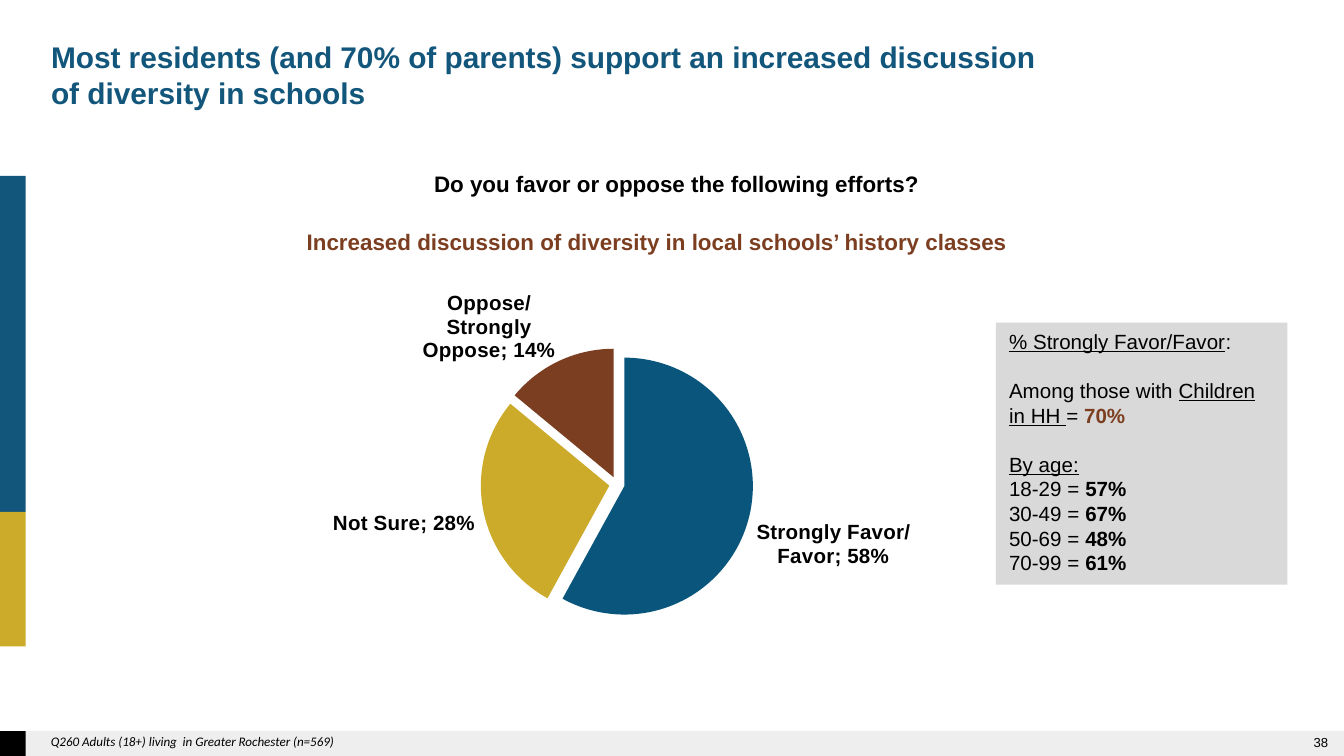
"""Build the survey slide on discussing diversity in schools."""
import copy

import pptx
import pptx.chart.data
import pptx.dml.color
import pptx.enum.chart
import pptx.enum.shapes
import pptx.enum.text
import pptx.oxml
import pptx.oxml.ns
import pptx.util

Inches, Pt = pptx.util.Inches, pptx.util.Pt
RGBColor = pptx.dml.color.RGBColor
ALIGN = pptx.enum.text.PP_ALIGN
ANCHOR = pptx.enum.text.MSO_ANCHOR

BLUE = RGBColor(0x12, 0x56, 0x7C)
PIE_BLUE = RGBColor(0x09, 0x55, 0x7C)
GOLD = RGBColor(0xCC, 0xAB, 0x2B)
BROWN = RGBColor(0x7C, 0x3E, 0x20)
BLACK = RGBColor(0, 0, 0)
PANEL_GRAY = RGBColor(0xD9, 0xD9, 0xD9)
FOOTER_GRAY = RGBColor(0xEE, 0xEE, 0xEE)

TITLE = ("Most residents (and 70% of parents) support an increased discussion \v"
         "of diversity in schools")
QUESTION = "Do you favor or oppose the following efforts?"
EFFORT = "Increased discussion of diversity in local schools’ history classes"
FOOTNOTE = "Q260 Adults (18+) living  in Greater Rochester (n=569)"
PAGE_NUMBER = "38"

ANSWERS = [
    ("Strongly Favor/ Favor", 0.58, PIE_BLUE),
    ("Not Sure", 0.28, GOLD),
    ("Oppose/ Strongly Oppose", 0.14, BROWN),
]
AGES = [("18-29", "57%"), ("30-49", "67%"), ("50-69", "48%"), ("70-99", "61%")]

UNDERLINED = {"underline": True}
BOLD = {"bold": True}
PANEL = [
    (0, [("% Strongly Favor/Favor", UNDERLINED), (":", {})]),
    (13, [("Among those with ", {}), ("Children in HH ", UNDERLINED),
          ("= ", {}), ("70%", {"bold": True, "color": BROWN})]),
    (13, [("By age:", UNDERLINED)]),
] + [(0, [(f"{age} = ", {}), (share, BOLD)]) for age, share in AGES]

BARS = [
    ((0, 5.44, 10, 0.19), FOOTER_GRAY),
    ((0, 1.31, 0.19, 2.5), BLUE),
    ((0, 3.81, 0.19, 1), GOLD),
    ((0, 5.44, 0.19, 0.19), BLACK),
]
PLOT_AREA = {"x": 0.332, "y": 0.204, "w": 0.368, "h": 0.656}
OPPOSE_INDEX = 2
OPPOSE_LABEL_DROP = 0.02


def add_span(para, text, size=11, name="Arial", color=BLACK,
             bold=False, italic=False, underline=False):
    span = para.add_run()
    span.text = text
    font = span.font
    font.size, font.name, font.bold = Pt(size), name, bold
    font.italic, font.underline = italic, underline
    font.color.rgb = color


def add_text(page, place, text, align=ALIGN.LEFT, anchor=ANCHOR.TOP, **style):
    frame = page.shapes.add_textbox(*map(Inches, place)).text_frame
    frame.word_wrap = True
    frame.vertical_anchor = anchor
    para = frame.paragraphs[0]
    para.alignment = align
    add_span(para, text, **style)


def add_block(page, place, color):
    block = page.shapes.add_shape(
        pptx.enum.shapes.MSO_SHAPE.RECTANGLE, *map(Inches, place))
    block.shadow.inherit = False
    block.fill.solid()
    block.fill.fore_color.rgb = color
    block.line.fill.background()
    return block


def set_title(page):
    box = page.shapes.title
    box.left, box.top, box.width, box.height = map(Inches, (0.28, 0.24, 8.52, 0.5))
    frame = box.text_frame
    frame.auto_size = pptx.enum.text.MSO_AUTO_SIZE.NONE
    frame.vertical_anchor = ANCHOR.TOP
    frame.text = TITLE
    para = frame.paragraphs[0]
    para.alignment = ALIGN.LEFT
    for span in para.runs:
        span.font.size, span.font.name, span.font.bold = Pt(16), "Arial", True
        span.font.color.rgb = BLUE


def chart_element(content):
    namespace = pptx.oxml.ns.nsdecls("c")
    return pptx.oxml.parse_xml(content.replace(" NS", " " + namespace, 1))


def lower_label(labels, index, drop):
    label = chart_element(
        f'<c:dLbl NS><c:idx val="{index}"/><c:layout><c:manualLayout>'
        f'<c:x val="0"/><c:y val="{drop}"/></c:manualLayout></c:layout></c:dLbl>')
    for part in labels:
        if part.tag != pptx.oxml.ns.qn("c:showLeaderLines"):
            label.append(copy.deepcopy(part))
    labels.insert(0, label)


def add_pie(page):
    data = pptx.chart.data.CategoryChartData(number_format="0%")
    data.categories = [answer for answer, _, _ in ANSWERS]
    data.add_series("Series 1", [share for _, share, _ in ANSWERS])
    chart = page.shapes.add_chart(
        pptx.enum.chart.XL_CHART_TYPE.PIE,
        *map(Inches, (1.33, 1.96, 6.32, 3.09)), data).chart
    chart.has_title = chart.has_legend = False
    chart.font.size, chart.font.name, chart.font.bold = Pt(8), "Arial", True
    chart.font.color.rgb = BLACK

    plot = chart.plots[0]
    series = plot.series[0]
    categories = series._element.find(pptx.oxml.ns.qn("c:cat"))
    categories.addprevious(chart_element('<c:explosion NS val="6"/>'))
    for index, (_, _, color) in enumerate(ANSWERS):
        fill = series.points[index].format.fill
        fill.solid()
        fill.fore_color.rgb = color

    labels = series.data_labels
    labels.show_value = labels.show_category_name = True
    labels.number_format, labels.number_format_is_linked = "0%", False
    labels.position = pptx.enum.chart.XL_LABEL_POSITION.OUTSIDE_END
    labels.font.size, labels.font.name, labels.font.bold = Pt(11), "Arial", True
    labels.font.color.rgb = BLACK
    bubble_flag = labels._element.find(pptx.oxml.ns.qn("c:showBubbleSize"))
    bubble_flag.addnext(chart_element("<c:separator NS>; </c:separator>"))
    lower_label(labels._element, OPPOSE_INDEX, OPPOSE_LABEL_DROP)

    area = plot._element.getparent()
    for old in area.findall(pptx.oxml.ns.qn("c:layout")):
        area.remove(old)
    modes = "".join(f'<c:{side}Mode val="edge"/>' for side in "xy")
    sizes = "".join(f'<c:{side} val="{value}"/>' for side, value in PLOT_AREA.items())
    area.insert(0, chart_element(
        '<c:layout NS><c:manualLayout><c:layoutTarget val="inner"/>'
        f"{modes}{sizes}</c:manualLayout></c:layout>"))


def add_panel(page):
    frame = add_block(page, (7.41, 2.4, 2.17, 1.95), PANEL_GRAY).text_frame
    frame.word_wrap = True
    frame.vertical_anchor = ANCHOR.TOP
    for index, (gap, spans) in enumerate(PANEL):
        para = frame.add_paragraph() if index else frame.paragraphs[0]
        para.alignment = ALIGN.LEFT
        para.space_before = Pt(gap)
        for text, style in spans:
            add_span(para, text, **style)


def main():
    deck = pptx.Presentation()
    deck.slide_width = Inches(10)
    deck.slide_height = deck.slide_width * 9 // 16
    page = deck.slides.add_slide(deck.slide_layouts[5])
    for place, color in BARS:
        add_block(page, place, color)
    add_text(page, (7.65, 5.44, 2.33, 0.17), PAGE_NUMBER,
             align=ALIGN.RIGHT, anchor=ANCHOR.MIDDLE, size=7)
    set_title(page)
    add_text(page, (2.66, 1.22, 4.75, 0.3), QUESTION,
             align=ALIGN.CENTER, size=12, bold=True)
    add_pie(page)
    add_text(page, (0.28, 5.41, 6.58, 0.22), FOOTNOTE,
             size=7, name="Calibri", italic=True)
    add_text(page, (1.96, 1.65, 5.86, 0.3), EFFORT,
             align=ALIGN.CENTER, size=12, color=BROWN, bold=True)
    add_panel(page)
    deck.save("out.pptx")


if __name__ == "__main__":
    main()
